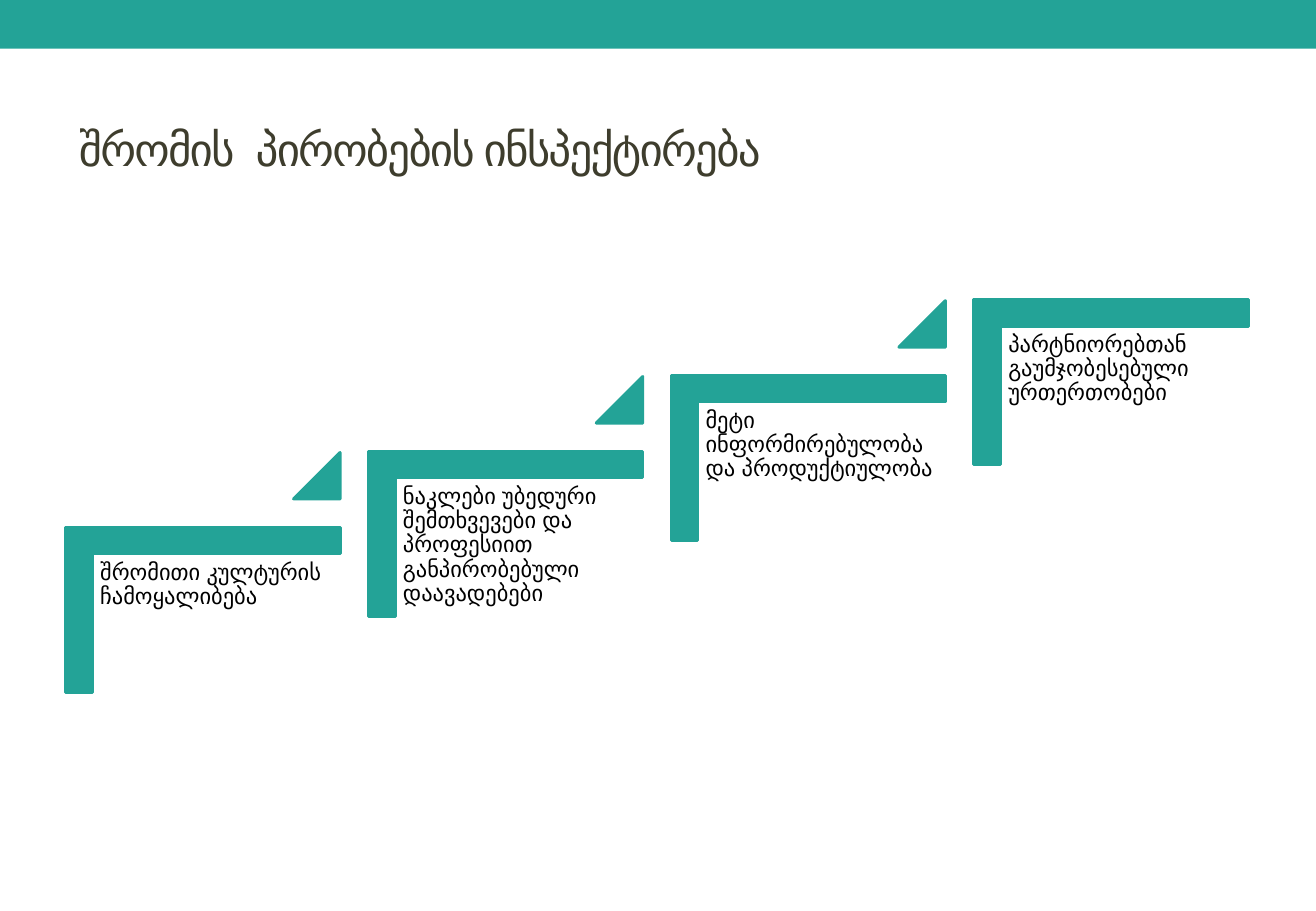
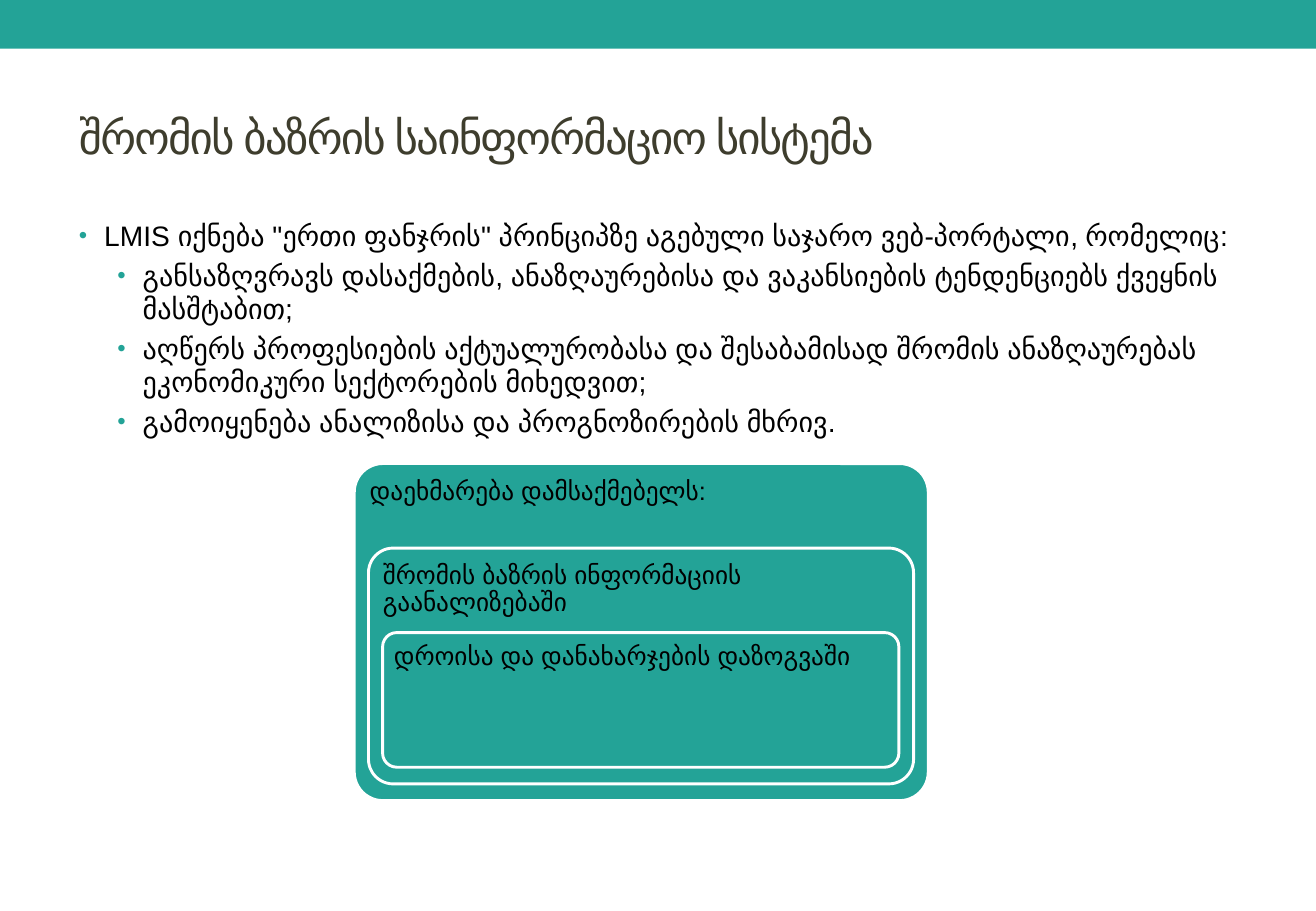
from lxml import etree
from pptx import Presentation
from pptx.dml.color import RGBColor
from pptx.enum import shapes, text
from pptx.oxml.ns import qn
from pptx.util import Inches, Pt

# Shared look
TEAL, OLIVE, BLACK, WHITE = "23A397", "3E3D2D", "000000", "FFFFFF"
FONT = "Arial"
KIND = shapes.MSO_SHAPE
WIDE, HIGH = 13, 9
EDGE = 2.08
PAD = (0.13, 0.06, 0.13, 0.06)

# Content: title runs are (text, size)
INSPECT = [("შრომის", 32), (" ", 54), ("პირობების ინსპექტირება", 32)]
STEPS = [
    "შრომითი კულტურის ჩამოყალიბება",
    "ნაკლები უბედური შემთხვევები და პროფესიით განპირობებული დაავადებები",
    "მეტი ინფორმირებულობა და პროდუქტიულობა",
    "პარტნიორებთან გაუმჯობესებული ურთერთობები",
]
MARKET = [("შრომის ბაზრის საინფორმაციო სისტემა", 32)]
POINTS = [  # level, text
    (0, "LMIS იქნება \"ერთი ფანჯრის\" პრინციპზე აგებული საჯარო ვებ-პორტალი, რომელიც:"),
    (1, "განსაზღვრავს დასაქმების, ანაზღაურებისა და ვაკანსიების ტენდენციებს ქვეყნის მასშტაბით;"),
    (1, "აღწერს პროფესიების აქტუალურობასა და შესაბამისად შრომის ანაზღაურებას ეკონომიკური სექტორების მიხედვით;"),
    (1, "გამოიყენება ანალიზისა და პროგნოზირების მხრივ."),
]
NEST = [  # text, height, corner rounding
    ("დაეხმარება დამსაქმებელს:", 3.33, 0.085),
    ("შრომის ბაზრის ინფორმაციის გაანალიზებაში", 2.33, 0.105),
    ("დროისა და დანახარჯების დაზოგვაში", 1.33, 0.105),
]


def color(code):
    return RGBColor.from_string(code)


def apply(item, **form):
    for name, value in form.items():
        setattr(item, name, value)


def frame(shape, pad, anchor=text.MSO_ANCHOR.TOP):
    body = shape.text_frame
    left, top, right, foot = map(Inches, pad)
    apply(body, word_wrap=True, vertical_anchor=anchor, margin_left=left,
          margin_top=top, margin_right=right, margin_bottom=foot)
    return body


def write(para, words, size, ink=BLACK):
    run = para.add_run()
    run.text = words
    apply(run.font, name=FONT, size=Pt(size))
    run.font.color.rgb = color(ink)
    return run


def label(shape, words, size):
    para = frame(shape, [0.07] * 4).paragraphs[0]
    apply(para, line_spacing=0.9, alignment=text.PP_ALIGN.LEFT)
    write(para, words, size)


def box(slide, *place):
    return slide.shapes.add_textbox(*map(Inches, place))


def draw(slide, kind, place, line=None, adjust=()):
    shape = slide.shapes.add_shape(kind, *map(Inches, place))
    shape.shadow.inherit = False
    shape.fill.solid()
    shape.fill.fore_color.rgb = color(TEAL)
    if line:
        shape.line.color.rgb = color(line)
        shape.line.width = Pt(EDGE)
    else:
        shape.line.fill.background()
    for i, value in enumerate(adjust):
        shape.adjustments[i] = value
    return shape


def bullet(para, level):
    props = para._p.get_or_add_pPr()
    props.set("marL", str(Inches(0.25 + 0.38 * level)))
    props.set("indent", str(Inches(-0.25)))
    tint = etree.SubElement(props, qn("a:buClr"))
    etree.SubElement(tint, qn("a:srgbClr"), val=TEAL)
    etree.SubElement(props, qn("a:buSzPct"), val="85000")
    etree.SubElement(props, qn("a:buFont"), typeface=FONT)
    etree.SubElement(props, qn("a:buChar"), char="•")


def page(deck, title):
    slide = deck.slides.add_slide(deck.slide_layouts[6])
    draw(slide, KIND.RECTANGLE, (0, 0, WIDE, 0.48))
    body = frame(box(slide, 0.65, 0.7, 11.7, 1.3), PAD, text.MSO_ANCHOR.MIDDLE)
    for words, size in title:
        run = write(body.paragraphs[0], words, size, OLIVE)
        run._r.get_or_add_rPr().set("spc", "-130")
    return slide


def stairs(slide):
    for i, words in enumerate(STEPS):
        x, y = 0.92 + 2.99 * i, 4.47 - 0.75 * i
        bar = draw(slide, KIND.CORNER, (x + 0.27, y + 0.2, 1.63, 2.71),
                   TEAL, (0.161, 0.161))
        bar.rotation = 90
        label(box(slide, x, y + 1, 2.45, 2.14), words, 16)
        if i < len(STEPS) - 1:
            draw(slide, KIND.ISOSCELES_TRIANGLE, (x + 1.98, y, 0.46, 0.46),
                 TEAL, (1,))


def points(slide):
    body = frame(box(slide, 0.65, 2.1, 11.7, 6.4), PAD)
    for i, (level, words) in enumerate(POINTS):
        para = body.add_paragraph() if i else body.paragraphs[0]
        apply(para, level=level, space_before=Pt(4))
        bullet(para, level)
        write(para, words, 20)


def nest(slide):
    for i, (words, high, curve) in enumerate(NEST):
        place = (3.5 + 0.14 * i, 4.58 + 0.835 * i, 5.67 - 0.285 * i, high)
        shape = draw(slide, KIND.ROUNDED_RECTANGLE, place, WHITE, (curve,))
        label(shape, words, 18)


def main():
    deck = Presentation()
    apply(deck, slide_width=Inches(WIDE), slide_height=Inches(HIGH))
    stairs(page(deck, INSPECT))
    market = page(deck, MARKET)
    points(market)
    nest(market)
    deck.save("out.pptx")


if __name__ == "__main__":
    main()
